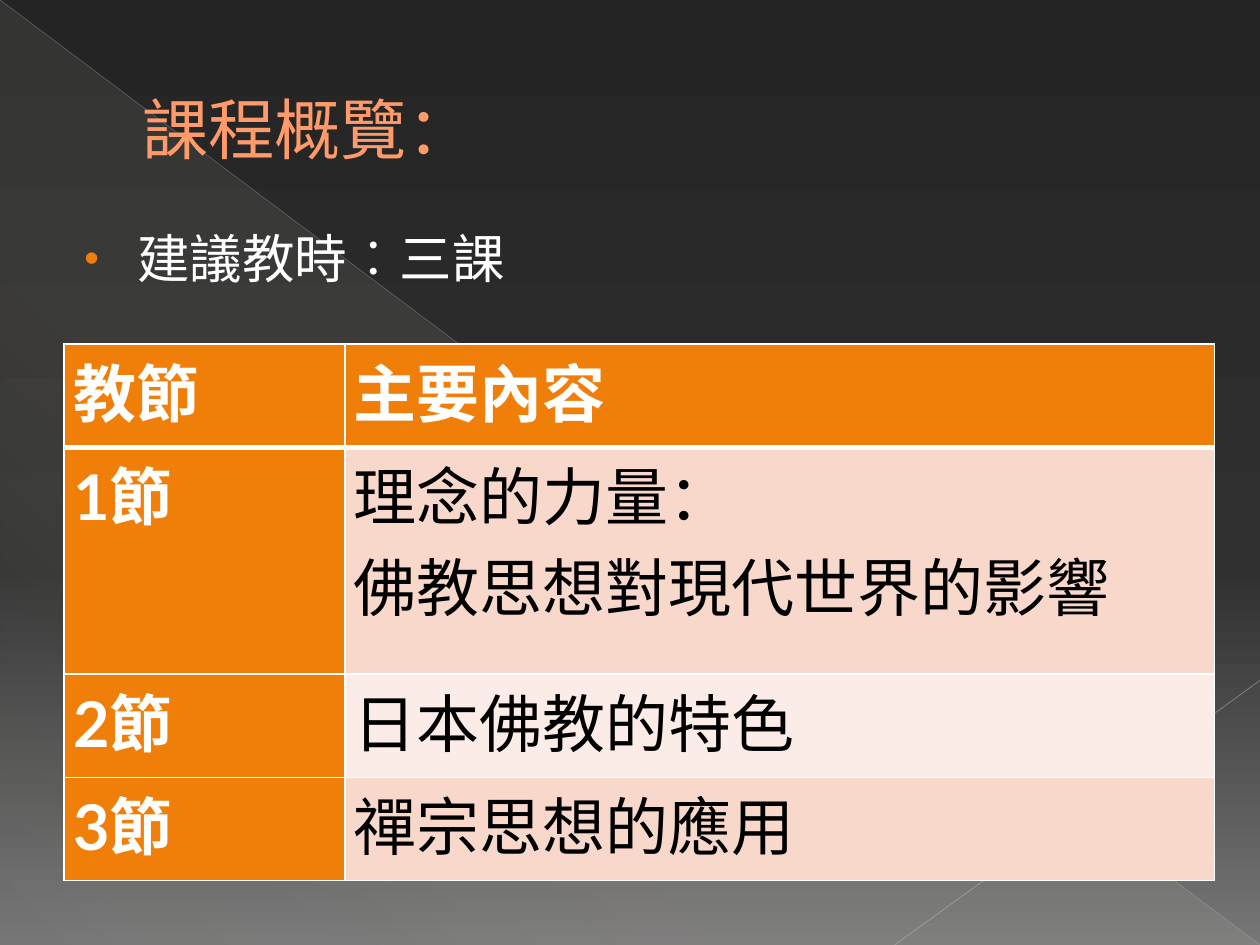
from lxml.etree import SubElement
from pptx import Presentation
from pptx.dml.color import RGBColor
from pptx.enum.shapes import MSO_CONNECTOR as Connector, MSO_SHAPE as Shape
from pptx.enum.text import MSO_ANCHOR as Anchor, MSO_AUTO_SIZE as AutoSize, PP_ALIGN as Align
from pptx.oxml.ns import qn
from pptx.util import Inches, Pt

THEME = {
    "font": "Lato", "title_size": 37.8, "body_size": 30, "table_size": 36,
    "title": "FF9B6A", "accent": "F07F09", "light": "FFFFFF", "dark": "000000",
    "bands": ["F9D8CC", "FCECE7"],
    "backdrop": [(0, "242424", 100), (60, "303030", 100), (100, "767676", 100)],
    "veil": [(0, "E3DED1", 10), (70, "E3DED1", 8), (100, "E3DED1", 1)],
}


def write(para, text, size, color, bold=False):
    span = para.add_run()
    span.text = text
    span.font.name = THEME["font"]
    span.font.size = Pt(size)
    span.font.bold = bold
    span.font.color.rgb = RGBColor.from_string(color)
    para.alignment = Align.LEFT


def set_gradient(gradient, stops, angle):
    for child in list(gradient):
        gradient.remove(child)
    stop_list = SubElement(gradient, qn("a:gsLst"))
    for position, color, opacity in stops:
        stop = SubElement(stop_list, qn("a:gs"), pos=str(position * 1000))
        shade = SubElement(stop, qn("a:srgbClr"), val=color)
        SubElement(shade, qn("a:alpha"), val=str(opacity * 1000))
    SubElement(gradient, qn("a:lin"), ang=str(angle * 60000), scaled="0")


deck = Presentation()
deck.slide_width, deck.slide_height = Inches(10), Inches(7.5)
width, height = deck.slide_width, deck.slide_height
page = deck.slides.add_slide(deck.slide_layouts[1])
page.background.fill.gradient()
set_gradient(page.element.find(".//" + qn("a:gradFill")), THEME["backdrop"], 90)

veil = page.shapes.add_shape(Shape.RIGHT_TRIANGLE, 0, 0, width, height)
veil.shadow.inherit = False
veil.line.fill.background()
veil.fill.gradient()
set_gradient(veil.element.spPr.find(qn("a:gradFill")), THEME["veil"], 133)

for start_x, start_y, end_x, end_y, color, weight, opacity in [
    (0, 0, 1, 1, "B6B6B6", 0.39, 35),
    (1, 0.72, 0.71, 1, "BFBFBF", 0.47, 45),
]:
    ray = page.shapes.add_connector(
        Connector.STRAIGHT, int(width * start_x), int(height * start_y),
        int(width * end_x), int(height * end_y))
    ray.line.width = Pt(weight)
    ray.line.color.rgb = RGBColor.from_string(color)
    shade = ray.element.spPr.find(".//" + qn("a:srgbClr"))
    SubElement(shade, qn("a:alpha"), val=str(opacity * 1000))
    SubElement(ray.element.spPr, qn("a:effectLst"))

title, body = page.shapes.title, page.placeholders[1]
for box, top, share, anchor, margin, indent, text, size, color in [
    (title, 0.07, 0.13, Anchor.MIDDLE, 0.53, 0, "課程概覽：", THEME["title_size"], THEME["title"]),
    (body, 0.233, 0.11, Anchor.TOP, 0.49, -0.42, "建議教時︰三課", THEME["body_size"], THEME["light"]),
]:
    page.shapes.element.append(box.element)
    box.left, box.top = int(width * 0.05), int(height * top)
    box.width, box.height = int(width * 0.9), int(height * share)
    frame = box.text_frame
    frame.auto_size, frame.word_wrap = AutoSize.NONE, True
    frame.vertical_anchor = anchor
    para = frame.paragraphs[0]
    write(para, text, size, color)
    layout = para._p.get_or_add_pPr()
    layout.set("marL", str(Inches(margin)))
    layout.set("indent", str(Inches(indent)))

bullet = body.text_frame.paragraphs[0]._p.get_or_add_pPr()
SubElement(SubElement(bullet, qn("a:buClr")), qn("a:srgbClr"), val=THEME["accent"])
SubElement(bullet, qn("a:buSzPct"), val="80000")
SubElement(bullet, qn("a:buFont"), typeface="Arial")
SubElement(bullet, qn("a:buChar"), char="•")

lessons = [
    ("教節", ["主要內容"]),
    ("1節", ["理念的力量：", "佛教思想對現代世界的影響"]),
    ("2節", ["日本佛教的特色"]),
    ("3節", ["禪宗思想的應用"]),
]
columns, rows = [2.23, 6.9], [0.82, 1.8, 0.82, 0.82]
table = page.shapes.add_table(
    len(rows), len(columns), Inches(0.51), Inches(2.73),
    Inches(sum(columns)), Inches(sum(rows))).table
for column, size in zip(table.columns, columns):
    column.width = Inches(size)
for row, size in zip(table.rows, rows):
    row.height = Inches(size)

for row_index, (lesson, topics) in enumerate(lessons):
    for column_index, lines in enumerate([[lesson], topics]):
        cell = table.cell(row_index, column_index)
        heading = row_index == 0 or column_index == 0
        fill = THEME["accent"] if heading else THEME["bands"][(row_index - 1) % 2]
        cell.margin_left = cell.margin_right = Inches(0.07)
        cell.margin_top = cell.margin_bottom = 0
        for index, line in enumerate(lines):
            para = cell.text_frame.add_paragraph() if index else cell.text_frame.paragraphs[0]
            write(para, line, THEME["table_size"],
                  THEME["light"] if heading else THEME["dark"], bold=heading)
        borders = cell._tc.get_or_add_tcPr()
        for side in ["lnL", "lnR", "lnT", "lnB"]:
            thick = (row_index, side) in [(0, "lnB"), (1, "lnT")]
            edge = SubElement(borders, qn("a:" + side), w=str(Pt(3 if thick else 1)))
            SubElement(SubElement(edge, qn("a:solidFill")), qn("a:srgbClr"), val=THEME["light"])
        cell.fill.solid()
        cell.fill.fore_color.rgb = RGBColor.from_string(fill)

deck.save("out.pptx")
